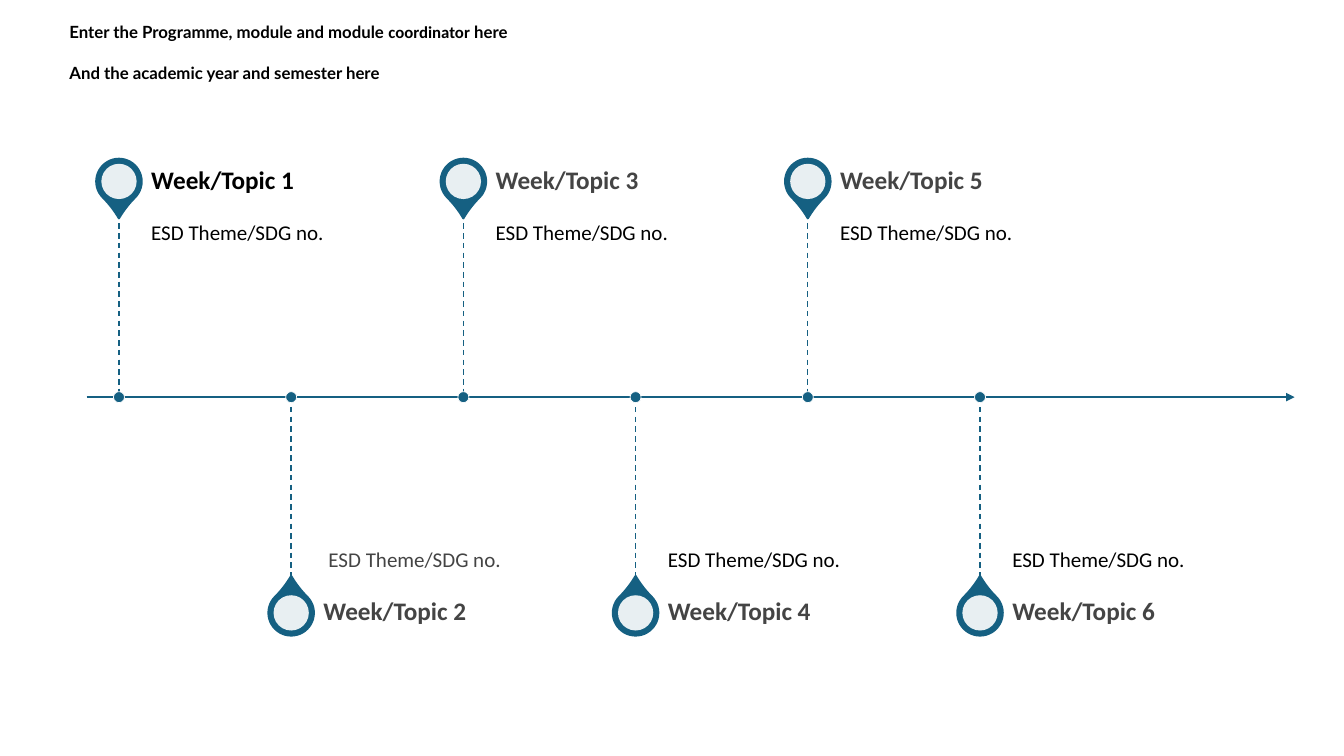
from pptx import Presentation
from pptx.dml.color import RGBColor
from pptx.enum.dml import MSO_LINE
from pptx.enum.shapes import MSO_CONNECTOR, MSO_SHAPE
from pptx.enum.text import MSO_ANCHOR
from pptx.oxml.ns import qn
from pptx.util import Inches, Pt
from lxml.etree import SubElement

TEAL = RGBColor(0x15, 0x60, 0x82)
WHITE = RGBColor(0xFF, 0xFF, 0xFF)
BLACK = RGBColor(0, 0, 0)
GREY = RGBColor(0x44, 0x44, 0x44)

AXIS_Y = 3.94
FIRST_X, LAST_X = 1.18, 9.72
TOPICS = 6
STEM = 1.82
PIN_OFFSET = 2.14
TEXT_GAP = 0.32
TEXT_W, HEAD_H = 2.8, 0.64


class Timeline:
    font = "Calibri"
    color = TEAL

    def __init__(self, slide):
        self.slide = slide

    def line(self, x1, y1, x2, y2, width):
        s = self.slide.shapes.add_connector(
            MSO_CONNECTOR.STRAIGHT, Inches(x1), Inches(y1), Inches(x2), Inches(y2))
        s.line.color.rgb = self.color
        s.line.width = Pt(width)
        SubElement(s._element.spPr, qn("a:effectLst"))
        return s

    def axis(self, x1, x2):
        s = self.line(x1, AXIS_Y, x2, AXIS_Y, 1.5)
        SubElement(s.line._get_or_add_ln(), qn("a:tailEnd"), type="triangle")

    def centred(self, kind, x, y, size, fill, outline=None, width=0):
        """Add a shape of equal sides around the point x, y."""
        s = self.slide.shapes.add_shape(
            kind, Inches(x - size / 2), Inches(y - size / 2), Inches(size), Inches(size))
        s.shadow.inherit = False
        s.fill.solid()
        s.fill.fore_color.rgb = fill
        if outline is None:
            s.line.fill.background()
        else:
            s.line.color.rgb = outline
            s.line.width = Pt(width)
        return s

    def pin(self, x, y, rotation):
        drop = self.centred(MSO_SHAPE.TEAR, x, y, 0.45, self.color, self.color, 1.5)
        drop.adjustments[0] = 1.15
        drop.rotation = rotation
        hole = self.centred(MSO_SHAPE.OVAL, x, y, 0.35, WHITE)
        rgb = hole._element.spPr.find(qn("a:solidFill"))[0]
        SubElement(rgb, qn("a:alpha"), val="90000")

    def text_box(self, x, y, w, h, insets, anchor=MSO_ANCHOR.TOP):
        s = self.slide.shapes.add_textbox(Inches(x), Inches(y), Inches(w), Inches(h))
        tf = s.text_frame
        tf.word_wrap = True
        tf.vertical_anchor = anchor
        tf.margin_left, tf.margin_top, tf.margin_right, tf.margin_bottom = map(Inches, insets)
        return tf

    def run(self, p, text, size, color=BLACK, bold=False, font=None):
        r = p.add_run()
        r.text = text
        r.font.name = font or self.font
        r.font.size = Pt(size)
        r.font.bold = bold
        r.font.color.rgb = color

    def label(self, box, text, size, color, bold=False):
        p = box.paragraphs[0]
        p.line_spacing = 0.9
        self.run(p, text, size, color, bold)

    def topic(self, number):
        """Add one milestone: odd numbers above the axis, even ones below."""
        x = FIRST_X + (number - 1) * (LAST_X - FIRST_X) / (TOPICS - 1)
        above = number % 2 == 1
        side = -1 if above else 1
        pin_y = AXIS_Y + side * PIN_OFFSET
        stem_end = AXIS_Y + side * STEM
        text_x = x + TEXT_GAP

        self.pin(x, pin_y, 135 if above else 315)
        indent = 0.05 if number == 2 else 0
        insets = (indent, 0.1, 0.1, 0.16) if above else (indent, 0.16, 0, 0.1)
        theme = self.text_box(text_x, min(AXIS_Y, stem_end), TEXT_W, STEM, insets,
                              MSO_ANCHOR.TOP if above else MSO_ANCHOR.BOTTOM)
        self.label(theme, "ESD Theme/SDG no.", 15, GREY if number == 2 else BLACK)
        heading = self.text_box(text_x, pin_y - HEAD_H / 2, TEXT_W, HEAD_H,
                                (0, 0, 0.12, 0), MSO_ANCHOR.MIDDLE)
        self.label(heading, f"Week/Topic {number}", 18, BLACK if number == 1 else GREY, True)

        stem = self.line(x, min(AXIS_Y, stem_end), x, max(AXIS_Y, stem_end), 1)
        stem.line.dash_style = MSO_LINE.DASH
        self.centred(MSO_SHAPE.OVAL, x, AXIS_Y, 0.11, self.color, WHITE, 0.5)

    def header(self):
        tf = self.text_box(0.59, 0.17, 7.91, 0.71, (0.1, 0.05, 0.1, 0.05))
        p = tf.paragraphs[0]
        for text, font in (("Enter the Programme, module and module ", "Lato"),
                           ("coordinator", "Calibri"), (" here", "Lato")):
            self.run(p, text, 12, bold=True, font=font)
        p = tf.add_paragraph()
        p.space_before = Pt(14.4)
        self.run(p, "And the academic year and semester here", 12, bold=True, font="Lato")


def main():
    prs = Presentation()
    prs.slide_width, prs.slide_height = Inches(13.33), Inches(7.5)
    timeline = Timeline(prs.slides.add_slide(prs.slide_layouts[6]))
    timeline.axis(0.86, 12.84)
    for number in range(1, TOPICS + 1):
        timeline.topic(number)
    timeline.header()
    prs.save("out.pptx")


if __name__ == "__main__":
    main()
